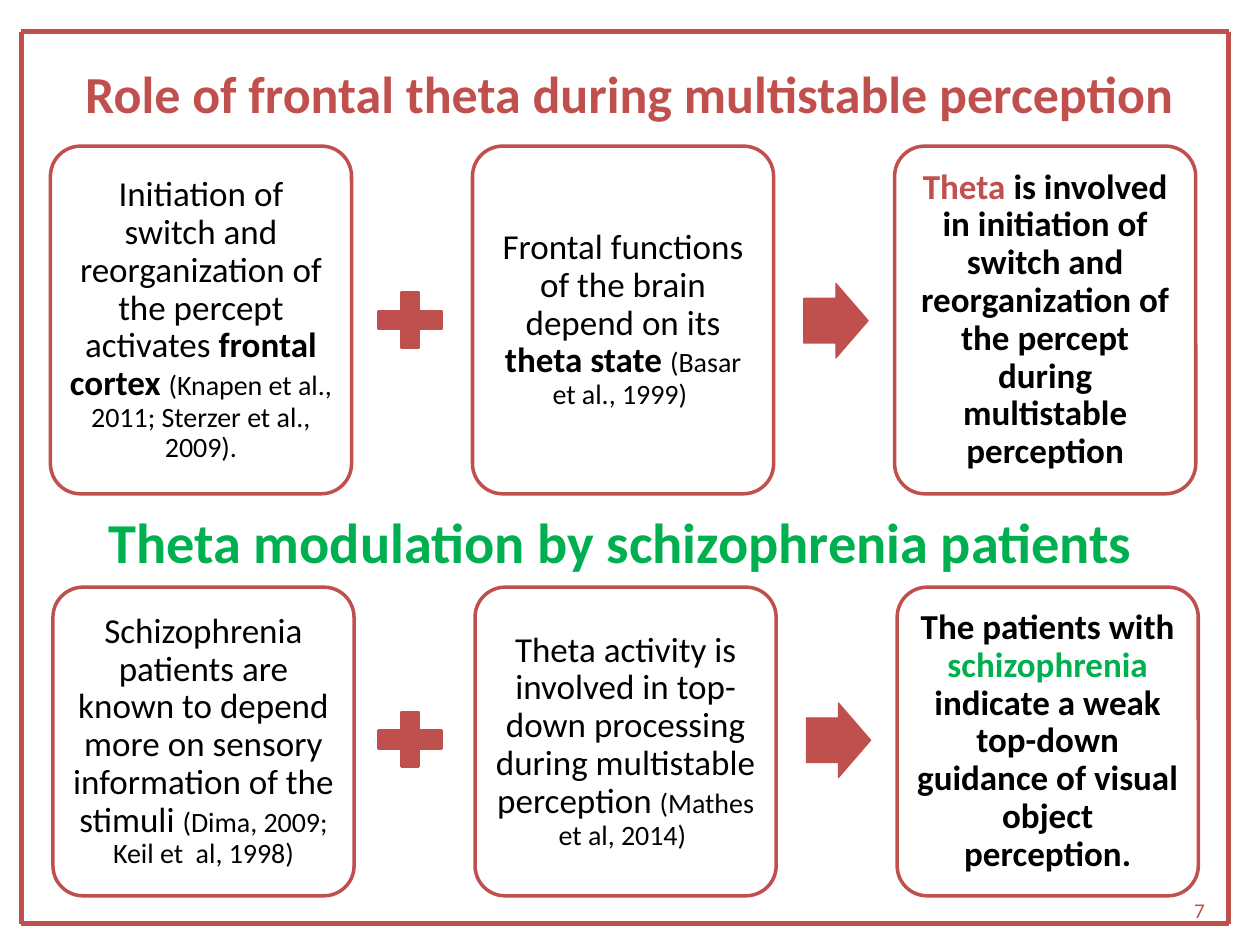
from itertools import pairwise

from lxml import etree
from pptx import Presentation
from pptx.dml.color import RGBColor
from pptx.enum.shapes import MSO_CONNECTOR, MSO_SHAPE
from pptx.enum.text import MSO_ANCHOR, MSO_AUTO_SIZE, PP_ALIGN
from pptx.oxml.ns import qn
from pptx.util import Emu, Pt

STRAIGHT = MSO_CONNECTOR.STRAIGHT
ROUNDED = MSO_SHAPE.ROUNDED_RECTANGLE
ARROW = MSO_SHAPE.RIGHT_ARROW
PLUS = MSO_SHAPE.MATH_PLUS
MIDDLE = MSO_ANCHOR.MIDDLE
NO_FIT = MSO_AUTO_SIZE.NONE
CENTER, RIGHT = PP_ALIGN.CENTER, PP_ALIGN.RIGHT

EMU_PER_PX = 9144  # 100 px to the inch
FONT = "Calibri"
COLORS = {"red": "C0504D", "green": "00B050", "black": "000000"}
TITLE_ONLY = 5

BODY, CITATION = 20, 16
CARD_WIDTH, CARD_STEP = 239, 335
CARD_MARGIN = 8


def px(length):
    return Emu(length * EMU_PER_PX)


def color(name):
    return RGBColor.from_string(COLORS[name])


class SlideBuilder:
    """Holds the style and the slide being filled."""

    def __init__(self, slide):
        self.slide = slide
        self.shapes = slide.shapes

    def set_runs(self, shape, runs, align=CENTER, margin=None, line_spacing=None):
        """Fill a shape with one paragraph; a run is (text, size, color, bold)."""
        frame = shape.text_frame
        frame.word_wrap = True
        frame.auto_size = NO_FIT
        frame.vertical_anchor = MIDDLE
        if margin is not None:
            frame.margin_left = frame.margin_right = px(margin)
            frame.margin_top = frame.margin_bottom = px(margin)
        paragraph = frame.paragraphs[0]
        paragraph.alignment = align
        paragraph.line_spacing = line_spacing
        for text, size, color_name, bold in runs:
            run = paragraph.add_run()
            run.text = text
            run.font.name = FONT
            run.font.size = Pt(size)
            run.font.bold = bold
            run.font.color.rgb = color(color_name)

    def title(self, box, runs):
        title = self.shapes.title
        title.left, title.top, title.width, title.height = map(px, box)
        self.set_runs(title, runs)

    def text(self, box, runs, align=CENTER):
        self.set_runs(self.shapes.add_textbox(*map(px, box)), runs, align)

    def line(self, start, end):
        line = self.shapes.add_connector(STRAIGHT, *map(px, start + end))
        line.line.color.rgb = color("red")
        line.line.width = Pt(2.75)
        properties = line._element.find(qn("p:spPr"))
        etree.SubElement(properties, qn("a:effectLst"))

    def shape(self, kind, box, line_width, filled=True):
        shape = self.shapes.add_shape(kind, *map(px, box))
        shape.shadow.inherit = False
        if filled:
            shape.fill.solid()
            shape.fill.fore_color.rgb = color("red")
        else:
            shape.fill.background()
        shape.line.color.rgb = color("red")
        shape.line.width = Pt(line_width)
        return shape

    def card(self, box, runs):
        card = self.shape(ROUNDED, box, 2, filled=False)
        card.adjustments[0] = 0.1
        self.set_runs(card, runs, margin=CARD_MARGIN, line_spacing=0.9)

    def arrow(self, box):
        arrow = self.shape(ARROW, box, 0.75)
        arrow.adjustments[0] = 0.6
        arrow.adjustments[1] = 0.5

    def plus(self, box):
        self.shape(PLUS, box, 2)

    def argument(self, left, top, height, sign_top, cards):
        """Draw a row that reads: premise plus premise, arrow, conclusion."""
        for index, runs in enumerate(cards):
            self.card((left + index * CARD_STEP, top, CARD_WIDTH, height), runs)
        self.plus((292, sign_top, 67, 58))
        self.arrow((left + 598, sign_top, 51, 59))


FRONTAL_CARDS = [
    [
        ("Initiation of switch and reorganization of the percept activates ", BODY, "black", False),
        ("frontal cortex ", BODY, "black", True),
        ("(Knapen et al., 2011; Sterzer et al., 2009).", CITATION, "black", False),
    ],
    [
        ("Frontal functions of the brain depend on its ", BODY, "black", False),
        ("theta state ", BODY, "black", True),
        ("(Basar et al., 1999) ", CITATION, "black", False),
    ],
    [
        ("Theta ", BODY, "red", True),
        ("is involved in initiation of switch and reorganization of the percept "
         "during multistable perception", BODY, "black", True),
    ],
]

PATIENT_CARDS = [
    [
        ("Schizophrenia patients are known to depend more on sensory information "
         "of the stimuli ", BODY, "black", False),
        ("(Dima, 2009; Keil et  al, 1998)", CITATION, "black", False),
    ],
    [
        ("Theta activity is involved in top-down processing during multistable "
         "perception ", BODY, "black", False),
        ("(Mathes et al, 2014) ", CITATION, "black", False),
    ],
    [
        ("The patients with ", BODY, "black", True),
        ("schizophrenia", BODY, "green", True),
        (" indicate a weak top-down guidance of visual object perception.", BODY, "black", True),
    ],
]


def main():
    presentation = Presentation()
    presentation.slide_width, presentation.slide_height = px(1000), px(750)
    slide = presentation.slides.add_slide(presentation.slide_layouts[TITLE_ONLY])
    builder = SlideBuilder(slide)

    corners = [(17, 25), (975, 25), (975, 733), (17, 733), (17, 25)]
    for start, end in pairwise(corners):
        builder.line(start, end)

    builder.title((50, 30, 900, 87), [
        ("Role of frontal theta during multistable perception", 29.7, "red", True)])
    builder.text((42, 367, 900, 125), [
        ("Theta modulation by schizophrenia patients", 32.2, "green", True)])
    builder.text((733, 702, 233, 40), [("7", 12, "red", False)], RIGHT)

    builder.argument(40, 116, 276, 225, FRONTAL_CARDS)
    builder.argument(42, 466, 245, 558, PATIENT_CARDS)

    presentation.save("out.pptx")


if __name__ == "__main__":
    main()
